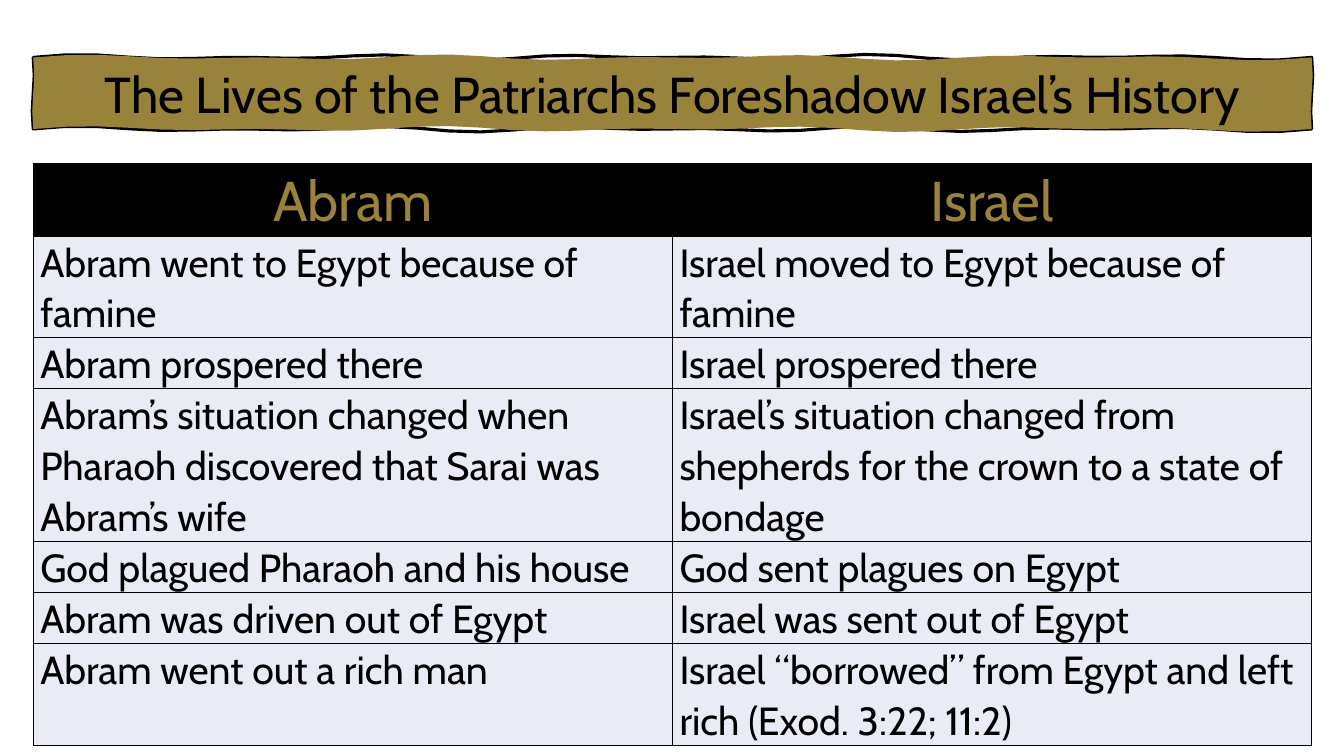
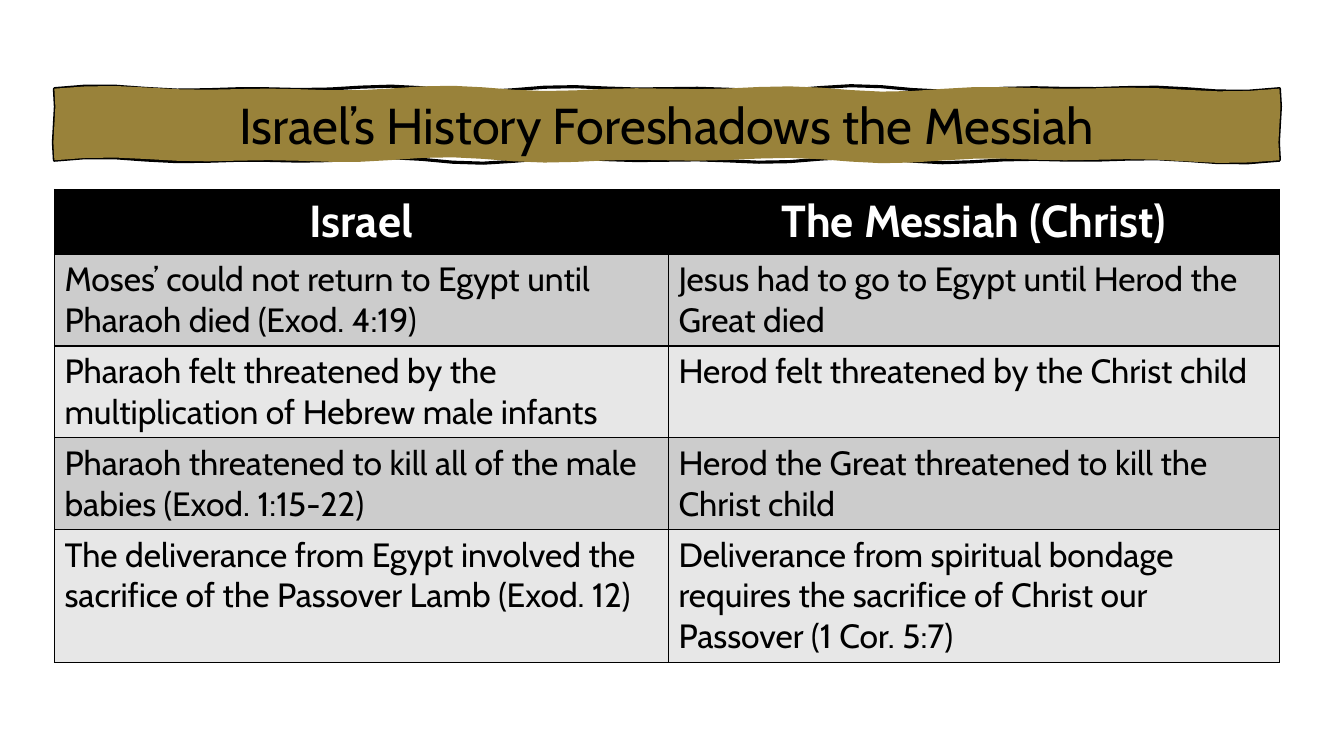
import math
from dataclasses import dataclass

from lxml import etree
from pptx import Presentation
from pptx import util as u
from pptx.dml.color import RGBColor
from pptx.enum import text
from pptx.oxml.ns import qn

PX = 9144


@dataclass(frozen=True)
class Theme:
    font: str = "Cabin"
    gold: str = "99823A"
    black: str = "000000"
    white: str = "FFFFFF"
    lavender: str = "E9EBF5"
    dark_gray: str = "CCCCCC"
    light_gray: str = "E7E7E7"
    title_size: float = 36
    banner_line: float = 2.25
    border: float = 1


@dataclass(frozen=True)
class TableStyle:
    head_color: str
    head_size: int
    head_bold: bool
    body_size: int
    bands: tuple
    margin_x: int
    margin_y: int
    line_spacing: float
    space_before: float
    space_after: float


THEME = Theme()
PATRIARCHS_STYLE = TableStyle(THEME.gold, 40, False, 28, (THEME.lavender,),
                              7, 0, 1.07, 5, 2.7)
MESSIAH_STYLE = TableStyle(THEME.white, 32, True, 24,
                           (THEME.dark_gray, THEME.light_gray), 10, 5, 1, 0, 0)

PATRIARCHS_ROWS = [
    ("Abram", "Israel"),
    ("Abram went to Egypt because of famine",
     "Israel moved to Egypt because of famine"),
    ("Abram prospered there", "Israel prospered there"),
    ("Abram’s situation changed when Pharaoh discovered that Sarai was Abram’s wife",
     "Israel’s situation changed from shepherds for the crown to a state of bondage"),
    ("God plagued Pharaoh and his house", "God sent plagues on Egypt"),
    ("Abram was driven out of Egypt", "Israel was sent out of Egypt"),
    ("Abram went out a rich man",
     "Israel “borrowed” from Egypt and left rich (Exod. 3:22; 11:2)"),
]
MESSIAH_ROWS = [
    ("Israel", "The Messiah (Christ)"),
    ("Moses’ could not return to Egypt until Pharaoh died (Exod. 4:19)",
     "Jesus had to go to Egypt until Herod the Great died"),
    ("Pharaoh felt threatened by the multiplication of Hebrew male infants",
     "Herod felt threatened by the Christ child"),
    ("Pharaoh threatened to kill all of the male babies (Exod. 1:15-22)",
     "Herod the Great threatened to kill the Christ child"),
    ("The deliverance from Egypt involved the sacrifice of the Passover Lamb (Exod. 12)",
     "Deliverance from spiritual bondage requires the sacrifice of Christ our Passover (1 Cor. 5:7)"),
]


def rgb(color):
    return RGBColor.from_string(color)


def style_paragraph(p, size, color, bold=False, centered=False):
    p.alignment = text.PP_ALIGN.CENTER if centered else text.PP_ALIGN.LEFT
    p.font.name = THEME.font
    p.font.size = u.Pt(size)
    p.font.bold = bold
    p.font.color.rgb = rgb(color)


def wavy_edge(start, end, waves, amplitude, steps):
    (x0, y0), (x1, y1) = start, end
    length = math.hypot(x1 - x0, y1 - y0)
    nx, ny = (y1 - y0) / length, (x0 - x1) / length
    for i in range(steps):
        t = i / steps
        offset = amplitude * sum(math.sin(math.tau * w * t) for w in waves) / len(waves)
        yield (round((x0 + (x1 - x0) * t + nx * offset) * PX),
               round((y0 + (y1 - y0) * t + ny * offset) * PX))


def add_wavy_box(slide, x, y, w, h, waves):
    corners = [(x, y), (x + w, y), (x + w, y + h), (x, y + h)]
    points = []
    for i, corner in enumerate(corners):
        following = corners[(i + 1) % 4]
        if i % 2:
            points += wavy_edge(corner, following, (1,), 1, 4)
        else:
            points += wavy_edge(corner, following, waves, 3, 40)
    builder = slide.shapes.build_freeform(*points[0], scale=1.0)
    builder.add_line_segments(points[1:], close=True)
    sp = builder.convert_to_shape()
    sp.shadow.inherit = False
    return sp


def add_banner(slide, title, x, y, w, h):
    outline = add_wavy_box(slide, x, y, w, h, (5, 8))
    outline.fill.background()
    outline.line.color.rgb = rgb(THEME.black)
    outline.line.width = u.Pt(THEME.banner_line)

    sp = add_wavy_box(slide, x, y, w, h, (4, 7))
    sp.fill.solid()
    sp.fill.fore_color.rgb = rgb(THEME.gold)
    sp.line.fill.background()
    tf = sp.text_frame
    tf.word_wrap = True
    tf.vertical_anchor = text.MSO_ANCHOR.MIDDLE
    tf.text = title
    style_paragraph(tf.paragraphs[0], THEME.title_size, THEME.black, centered=True)


def add_borders(cell):
    tc_pr = cell._tc.get_or_add_tcPr()
    for i, side in enumerate(("lnL", "lnR", "lnT", "lnB")):
        ln = etree.Element(qn(f"a:{side}"), w=str(u.Pt(THEME.border)))
        fill = etree.SubElement(ln, qn("a:solidFill"))
        etree.SubElement(fill, qn("a:srgbClr"), val=THEME.black)
        tc_pr.insert(i, ln)


def fill_cell(cell, content, row, style):
    is_head = row == 0
    cell.fill.solid()
    cell.fill.fore_color.rgb = rgb(
        THEME.black if is_head else style.bands[(row - 1) % len(style.bands)])
    cell.margin_left = cell.margin_right = style.margin_x * PX
    cell.margin_top = cell.margin_bottom = style.margin_y * PX
    cell.text = content
    p = cell.text_frame.paragraphs[0]
    p.line_spacing = style.line_spacing
    p.space_before = u.Pt(style.space_before)
    p.space_after = u.Pt(style.space_after)
    if is_head:
        style_paragraph(p, style.head_size, style.head_color, style.head_bold, True)
    else:
        style_paragraph(p, style.body_size, THEME.black)
    add_borders(cell)


def add_comparison(slide, rows, x, y, widths, heights, style):
    frame = slide.shapes.add_table(len(rows), len(widths), x * PX, y * PX,
                                   sum(widths) * PX, sum(heights) * PX)
    table = frame.table
    table.first_row = table.horz_banding = False
    for column, width in zip(table.columns, widths):
        column.width = width * PX
    for r, (contents, height) in enumerate(zip(rows, heights)):
        table.rows[r].height = height * PX
        for c, content in enumerate(contents):
            fill_cell(table.cell(r, c), content, r, style)


def add_slide(prs):
    slide = prs.slides.add_slide(prs.slide_layouts[6])
    slide.background.fill.solid()
    slide.background.fill.fore_color.rgb = rgb(THEME.white)
    return slide


def main():
    prs = Presentation()
    prs.slide_width, prs.slide_height = 1333 * PX, 750 * PX

    s = add_slide(prs)
    add_comparison(s, PATRIARCHS_ROWS, 33, 162, (634, 634),
                   (72, 101, 50, 152, 50, 50, 101), PATRIARCHS_STYLE)
    add_banner(s, "The Lives of the Patriarchs Foreshadow Israel’s History",
               33, 57, 1268, 71)

    s = add_slide(prs)
    add_comparison(s, MESSIAH_ROWS, 54, 188, (609, 606),
                   (64, 91, 91, 91, 131), MESSIAH_STYLE)
    add_banner(s, "Israel’s History Foreshadows the Messiah", 54, 88, 1215, 71)

    prs.save("out.pptx")


if __name__ == "__main__":
    main()
